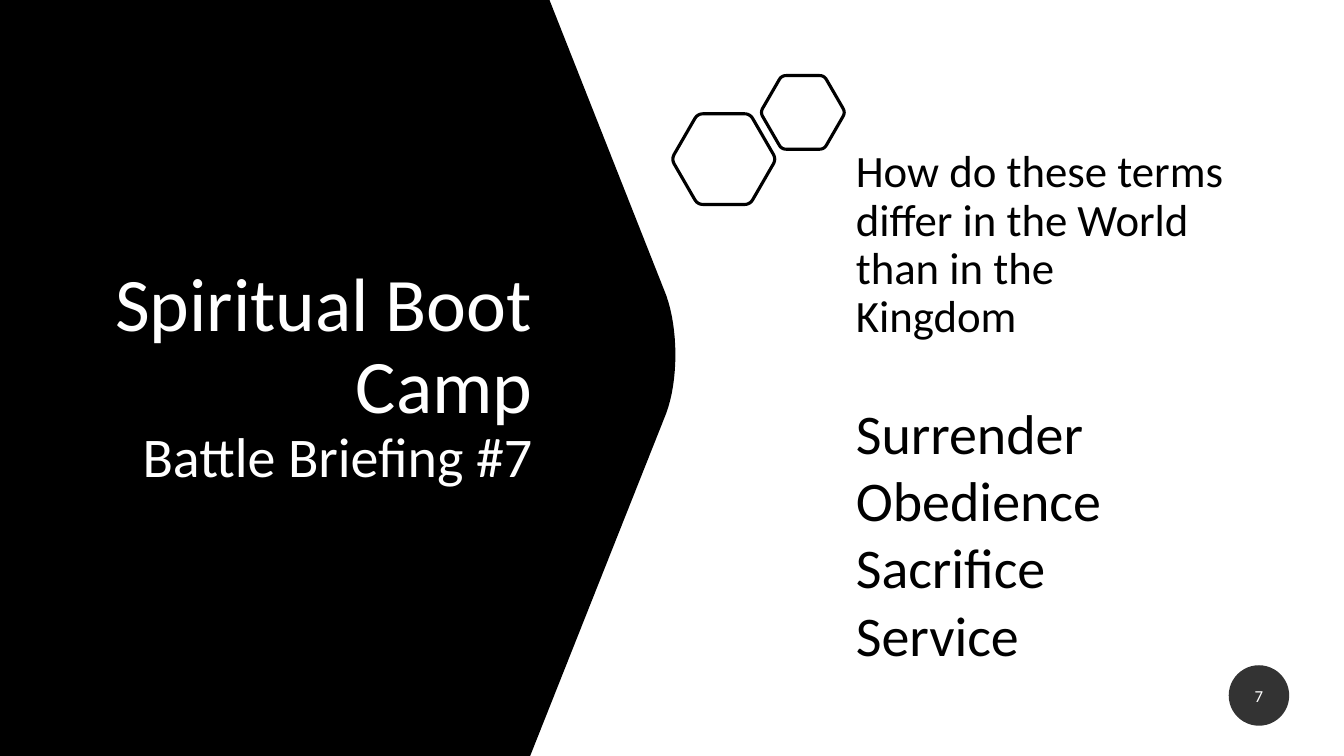
from math import cos, pi, sin, sqrt

from lxml.etree import SubElement
from pptx import Presentation
from pptx.dml.color import RGBColor
from pptx.enum.shapes import MSO_SHAPE as SHAPE
from pptx.enum.text import MSO_ANCHOR as ANCHOR, PP_ALIGN as ALIGN
from pptx.oxml.ns import qn
from pptx.util import Pt

FONT = "Calibri"
COLORS = {"black": "000000", "white": "FFFFFF"}
TITLE = [("Spiritual Boot Camp", 54), ("Battle Briefing #7", 40)]
QUESTION = ["How do these terms differ in the World than in the", "Kingdom"]
TERMS = ["Surrender", "Obedience", "Sacrifice", "Service"]
PAGE = "7"

WIDTH, HEIGHT = 960, 540
PANEL_TOP, PANEL_BOTTOM = (392.5, 0), (378.7, HEIGHT)
NOSE = [(475.9, 211), (484.6, 235.5), (484.6, 271.5), (475.9, 295.2)]
HEXAGONS = [((517, 113.7), 64.8), ((573.5, 80.3), 52.6)]
ROUNDING = 0.11


def rgb(name):
    return RGBColor.from_string(COLORS[name])


def bezier(a, b, c, d, steps=16):
    points = []
    for i in range(steps + 1):
        t = i / steps
        weights = ((1 - t) ** 3, 3 * t * (1 - t) ** 2, 3 * t * t * (1 - t), t ** 3)
        points.append(tuple(sum(w * p[k] for w, p in zip(weights, (a, b, c, d)))
                            for k in (0, 1)))
    return points


def toward(a, b, share):
    return tuple(m + (n - m) * share for m, n in zip(a, b))


def rounded_hexagon(center, height):
    side = height / sqrt(3)
    corners = [(center[0] + side * cos(i * pi / 3), center[1] + side * sin(i * pi / 3))
               for i in range(6)]
    points = []
    for i, corner in enumerate(corners):
        start = toward(corner, corners[i - 1], ROUNDING)
        end = toward(corner, corners[(i + 1) % 6], ROUNDING)
        points += bezier(start, toward(start, corner, 0.67),
                         toward(end, corner, 0.67), end, 6)
    return points


def outline(shapes, points):
    scaled = [(Pt(x), Pt(y)) for x, y in points]
    builder = shapes.build_freeform(*scaled[0])
    builder.add_line_segments(scaled[1:], close=True)
    sp = builder.convert_to_shape()
    sp.shadow.inherit = False
    return sp


def add_run(p, text, size, color):
    r = p.add_run()
    r.text = text
    r.font.name, r.font.size = FONT, Pt(size)
    r.font.color.rgb = rgb(color)


def clear_margins(tf):
    tf.margin_left = tf.margin_right = tf.margin_top = tf.margin_bottom = 0


def add_lines(p, lines, color):
    for i, (text, size) in enumerate(lines):
        if i:
            p.add_line_break()
        add_run(p, text, size, color)
    p.line_spacing = 0.9


prs = Presentation()
prs.slide_width, prs.slide_height = Pt(WIDTH), Pt(HEIGHT)
s = prs.slides.add_slide(prs.slide_layouts[5])
shapes = s.shapes

title = shapes.title
title.left, title.top, title.width, title.height = Pt(60.5), Pt(101.5), Pt(327), Pt(337)
tf = title.text_frame
tf.word_wrap, tf.vertical_anchor = True, ANCHOR.MIDDLE
p = tf.paragraphs[0]
p.alignment = ALIGN.RIGHT
add_lines(p, TITLE, "white")

panel = outline(shapes, [(0, 0), PANEL_TOP, *bezier(*NOSE), PANEL_BOTTOM, (0, HEIGHT)])
panel.fill.solid()
panel.fill.fore_color.rgb = rgb("black")
panel.line.fill.background()
title.element.addprevious(panel.element)

for center, height in HEXAGONS:
    hexagon = outline(shapes, rounded_hexagon(center, height))
    hexagon.fill.background()
    hexagon.line.color.rgb = rgb("black")
    hexagon.line.width = Pt(2.25)

body = shapes.add_textbox(Pt(611.3), Pt(106.4), Pt(270), Pt(372))
tf = body.text_frame
tf.word_wrap = True
clear_margins(tf)
add_lines(tf.paragraphs[0], [(line, 32) for line in QUESTION], "black")
for i, term in enumerate(TERMS):
    p = tf.add_paragraph()
    p.space_before = Pt(5 if i else 45)
    add_lines(p, [(term, 40)], "black")

badge = shapes.add_shape(SHAPE.OVAL, Pt(877.7), Pt(475.2), Pt(43.2), Pt(43.2))
badge.shadow.inherit = False
badge.fill.solid()
badge.fill.fore_color.rgb = rgb("black")
fill_color = badge.element.spPr.find(qn("a:solidFill"))[0]
SubElement(fill_color, qn("a:alpha")).set("val", "80000")
badge.line.fill.background()
tf = badge.text_frame
clear_margins(tf)
tf.vertical_anchor = ANCHOR.MIDDLE
p = tf.paragraphs[0]
p.alignment = ALIGN.CENTER
add_run(p, PAGE, 12, "white")

prs.save("out.pptx")
